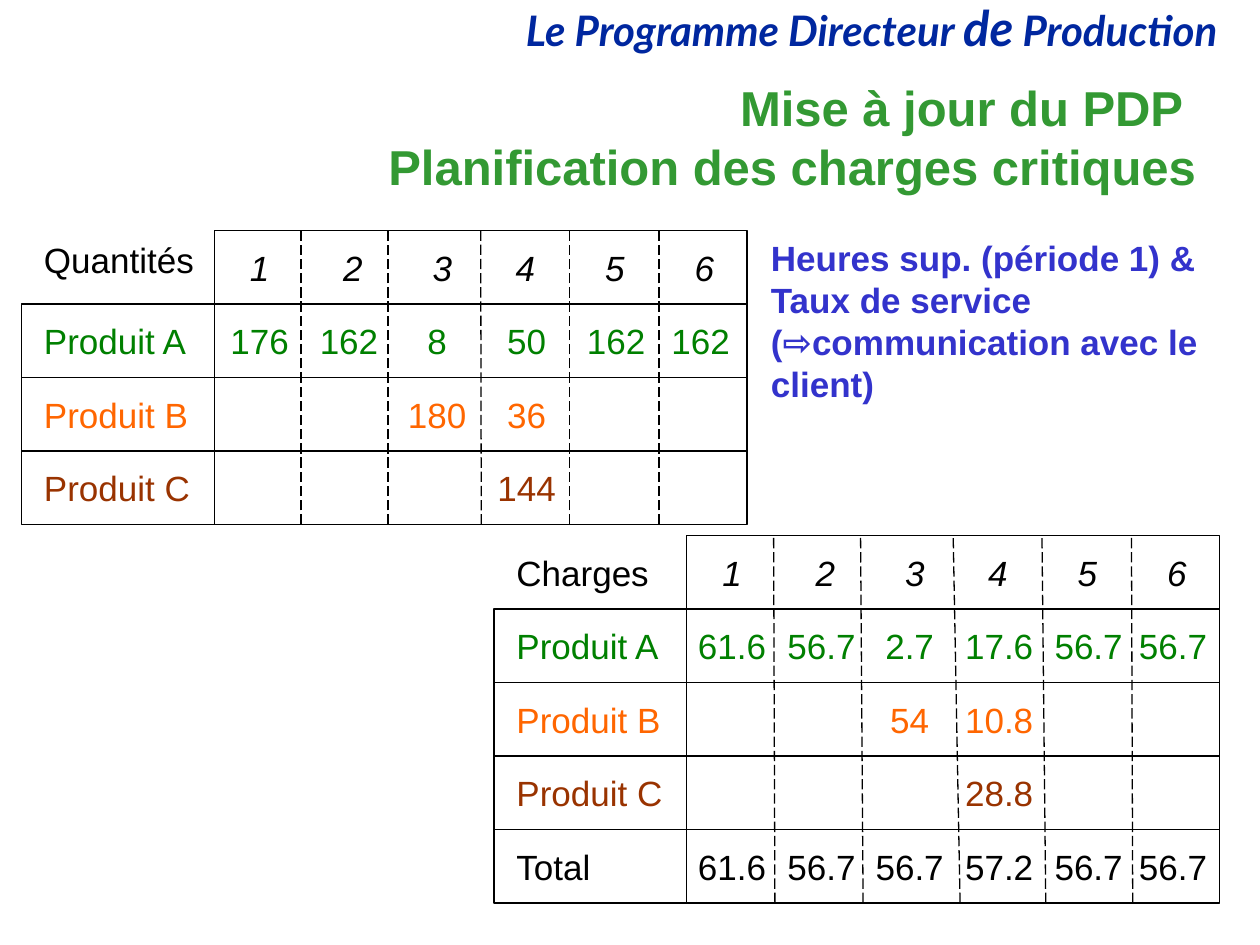
from dataclasses import dataclass

from lxml import etree
from pptx import Presentation
from pptx.dml.color import RGBColor
from pptx.enum.dml import MSO_LINE
from pptx.enum.shapes import MSO_CONNECTOR, MSO_SHAPE
from pptx.enum.text import MSO_ANCHOR, MSO_AUTO_SIZE, PP_ALIGN
from pptx.oxml.ns import qn
from pptx.util import Inches, Pt

STRAIGHT = MSO_CONNECTOR.STRAIGHT
RECTANGLE = MSO_SHAPE.RECTANGLE
LONG_DASH = MSO_LINE.LONG_DASH
LEFT, CENTER, RIGHT = PP_ALIGN.LEFT, PP_ALIGN.CENTER, PP_ALIGN.RIGHT
TOP, MIDDLE = MSO_ANCHOR.TOP, MSO_ANCHOR.MIDDLE
GROW = MSO_AUTO_SIZE.SHAPE_TO_FIT_TEXT
SITE_TOP, SITE_LEFT, SITE_RIGHT = 0, 1, 3


@dataclass(frozen=True)
class Theme:
    font: str = "Arial"
    banner_font: str = "Lato"
    black: str = "000000"
    banner: str = "00279F"
    title: str = "339933"
    note: str = "3333CC"
    product_a: str = "008000"
    product_b: str = "FF6600"
    product_c: str = "993300"
    title_size: int = 28
    banner_size: int = 24
    text_size: int = 20
    line_width: float = 0.75


THEME = Theme()

# Grid geometry in inches; horizontal offsets run from the left of the grid.
ROW_H = 7 / 12
TEXT_H = 0.43
LABEL_W, CELL_W = 1.45, 0.75
LABEL_X = 0.08
EDGES = [1.53, 2.22, 2.91, 3.65, 4.35, 5.06, 5.76]
PERIOD_CENTERS = [1.89, 2.63, 3.34, 4.0, 4.71, 5.42]
VALUE_CENTERS = [1.89, 2.6, 3.3, 4.01, 4.72, 5.39]

QUANTITIES = [
    ("Produit A", THEME.product_a, ["176", "162", "8", "50", "162", "162"]),
    ("Produit B", THEME.product_b, ["", "", "180", "36", "", ""]),
    ("Produit C", THEME.product_c, ["", "", "", "144", "", ""]),
]
LOADS = [
    ("Produit A", THEME.product_a, ["61.6", "56.7", "2.7", "17.6", "56.7", "56.7"]),
    ("Produit B", THEME.product_b, ["", "", "54", "10.8", "", ""]),
    ("Produit C", THEME.product_c, ["", "", "", "28.8", "", ""]),
    ("Total", THEME.black, ["61.6", "56.7", "56.7", "57.2", "56.7", "56.7"]),
]


class SlideBuilder:
    def __init__(self, slide, theme):
        self.s = slide
        self.theme = theme

    def text(self, x, y, w, h, text, color, size=None, font=None, bold=False,
             italic=False, align=LEFT, anchor=TOP, wrap=True, grow=True):
        """Add a one-paragraph text box and return its paragraph."""
        sp = self.s.shapes.add_textbox(Inches(x), Inches(y), Inches(w), Inches(h))
        tf = sp.text_frame
        tf.word_wrap = wrap
        tf.vertical_anchor = anchor
        if grow:
            tf.auto_size = GROW
        p = tf.paragraphs[0]
        p.text = text
        p.alignment = align
        p.font.name = font or self.theme.font
        p.font.size = Pt(size or self.theme.text_size)
        p.font.bold = bold
        p.font.italic = italic
        p.font.color.rgb = RGBColor.from_string(color)
        return p

    def stroke(self, line):
        line.color.rgb = RGBColor.from_string(self.theme.black)
        line.width = Pt(self.theme.line_width)

    def frame(self, x, y, w, h):
        sp = self.s.shapes.add_shape(RECTANGLE, Inches(x), Inches(y), Inches(w), Inches(h))
        sp.shadow.inherit = False
        sp.fill.background()
        self.stroke(sp.line)
        return sp

    def line(self, x1, y1, x2, y2, dashed=False):
        cxn = self.s.shapes.add_connector(
            STRAIGHT, Inches(x1), Inches(y1), Inches(x2), Inches(y2))
        self.stroke(cxn.line)
        if dashed:
            cxn.line.dash_style = LONG_DASH
        etree.SubElement(cxn._element.spPr, qn("a:effectLst"))
        return cxn

    def cell(self, center, row_top, text, color, italic=False):
        self.text(center - CELL_W / 2, row_top + (ROW_H - TEXT_H) / 2, CELL_W, TEXT_H,
                  text, color, italic=italic, align=CENTER)

    def grid(self, x, y, caption, rows, caption_rise=0.0, drifts=(0, 0, 0, 0, 0)):
        """Draw a plan by period; drifts shift the feet of the dashed lines."""
        body_top = y + ROW_H
        bottom = body_top + len(rows) * ROW_H
        right = x + EDGES[-1]
        pad = (ROW_H - TEXT_H) / 2

        body = self.frame(x, body_top, EDGES[-1], bottom - body_top)
        header = self.frame(x + EDGES[0], y, EDGES[-1] - EDGES[0], ROW_H)
        for i in range(1, len(rows)):
            rule_y = body_top + i * ROW_H
            rule = self.line(x, rule_y, right, rule_y)
            if 2 * i == len(rows):
                rule.begin_connect(body, SITE_LEFT)
                rule.end_connect(body, SITE_RIGHT)
        self.line(x + EDGES[0], bottom, x + EDGES[0], body_top)
        inner_edges = EDGES[1:-1]
        for i, (edge, drift) in enumerate(zip(inner_edges, drifts)):
            divider = self.line(x + edge + drift, bottom, x + edge, y, dashed=True)
            if i == len(inner_edges) // 2:
                divider.end_connect(header, SITE_TOP)

        self.text(x + LABEL_X, y + pad - caption_rise, LABEL_W, TEXT_H, caption,
                  self.theme.black, wrap=False)
        for period, center in enumerate(PERIOD_CENTERS, start=1):
            self.cell(x + center, y, str(period), self.theme.black, italic=True)
        for i, (label, color, values) in enumerate(rows):
            row_top = body_top + i * ROW_H
            self.text(x + LABEL_X, row_top + pad, LABEL_W, TEXT_H, label, color)
            for center, value in zip(VALUE_CENTERS, values):
                if value:
                    self.cell(x + center, row_top, value, color)

    def banner(self):
        t = self.theme
        p = self.text(1.68, -0.02, 8.08, 0.52, "", t.banner, t.banner_size,
                      t.banner_font, bold=True, italic=True, align=RIGHT)
        p.line_spacing = 0.9
        for text, size in [("Le Programme Directeur ", t.banner_size),
                           ("de", t.title_size),
                           (" Production", t.banner_size)]:
            r = p.add_run()
            r.text = text
            r.font.size = Pt(size)


def main():
    prs = Presentation()
    prs.slide_width, prs.slide_height = Inches(10), Inches(7.5)
    b = SlideBuilder(prs.slides.add_slide(prs.slide_layouts[6]), THEME)

    b.banner()
    b.text(1.42, 0.67, 8.17, 0.83,
           "Mise à jour du PDP \vPlanification des charges critiques",
           THEME.title, THEME.title_size, bold=True, align=RIGHT,
           anchor=MIDDLE, grow=False)
    b.text(6.02, 1.83, 3.98, 1.92,
           "Heures sup. (période 1) & Taux de service (⇨communication avec le client)",
           THEME.note, bold=True, grow=False)
    b.grid(0.17, 1.83, "Quantités", QUANTITIES, caption_rise=0.06)
    b.grid(3.92, 4.25, "Charges", LOADS, drifts=(0.01, 0.02, 0.05, 0.03, 0.01))
    prs.save("out.pptx")


if __name__ == "__main__":
    main()
